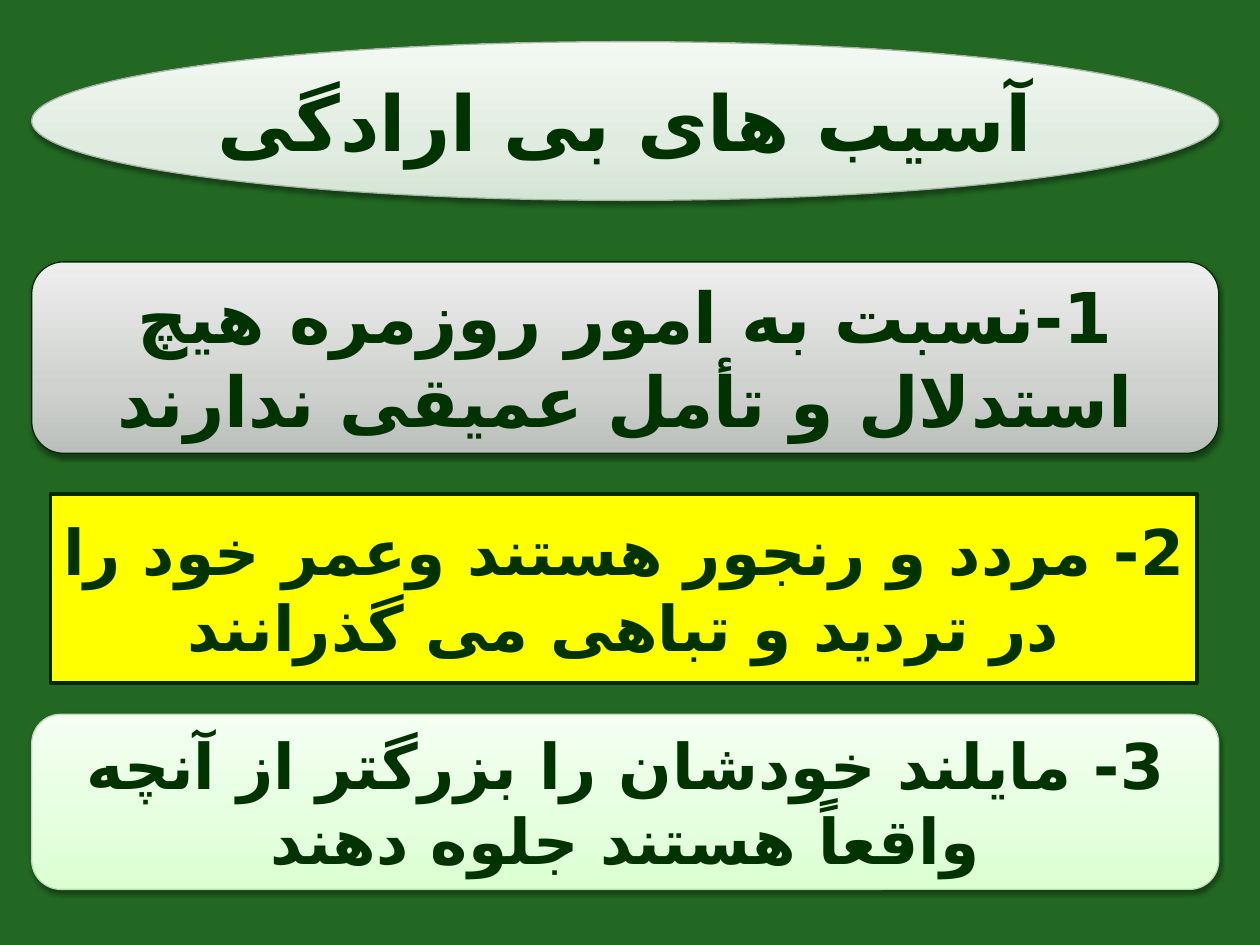
"""Build a slide with an oval heading and three numbered Persian statements."""
from copy import deepcopy
from dataclasses import dataclass

from lxml import etree
from pptx import Presentation, util as u
from pptx.dml.color import RGBColor
from pptx.enum import shapes as sh, text as tx
from pptx.oxml.ns import qn

FONT = "DejaVu Sans"
GREEN = RGBColor(0x22, 0x68, 0x22)
INK = RGBColor(0x00, 0x33, 0x00)
EDGE = RGBColor(0x00, 0x29, 0x00)
YELLOW = RGBColor(0xFF, 0xFF, 0x00)
GREY = (RGBColor(0xBB, 0xBF, 0xBB), RGBColor(0xD0, 0xD2, 0xD0), RGBColor(0xED, 0xEE, 0xED))
SAGE = (RGBColor(0xD5, 0xE5, 0xD5), RGBColor(0xE1, 0xEC, 0xE1), RGBColor(0xF3, 0xF8, 0xF3))
MINT = (RGBColor(0xDA, 0xFF, 0xD1), RGBColor(0xE4, 0xFF, 0xDE), RGBColor(0xF4, 0xFF, 0xF2))
SAGE_EDGE = RGBColor(0xA7, 0xB5, 0xA7)
MINT_EDGE = RGBColor(0xBC, 0xDD, 0xB4)
STOPS = (0, 0.35, 1)
KIND = sh.MSO_SHAPE


@dataclass
class Panel:
    kind: int
    top: float
    high: float
    fill: tuple
    edge: RGBColor
    size: int = 36
    words: str = ""
    left: float = 0.64
    wide: float = 23.93
    line: float = 0.75


HEAD = Panel(KIND.OVAL, 0.84, 3.2, SAGE, SAGE_EDGE)
PANELS = [
    Panel(KIND.ROUNDED_RECTANGLE, 5.28, 3.86, GREY, EDGE, 40,
          "1-نسبت به امور روزمره هیچ استدلال و تأمل عمیقی ندارند"),
    HEAD,
    Panel(KIND.ROUNDED_RECTANGLE, 14.4, 3.53, MINT, MINT_EDGE, 36,
          "3- مایلند خودشان را بزرگتر از آنچه واقعاً هستند جلوه دهند"),
    Panel(KIND.RECTANGLE, 9.96, 3.81, (YELLOW,), EDGE, 36,
          "2- مردد و رنجور هستند وعمر خود را در تردید و تباهی می گذرانند",
          1.02, 23.11, 2),
]


def blend(shape, tones: tuple) -> None:
    """Fill the shape with an upward gradient."""
    fill = shape.fill
    fill.gradient()
    fill.gradient_angle = 90
    stops = shape._element.spPr.find(qn("a:gradFill")).find(qn("a:gsLst"))
    stops.append(deepcopy(stops[-1]))
    for stop, tone, spot in zip(fill.gradient_stops, tones, STOPS):
        stop.color.rgb = tone
        stop.position = spot


def shade(shape) -> None:
    """Add a soft shadow below the shape."""
    root = shape._element.spPr.find(qn("a:effectLst"))
    drop = etree.SubElement(root, qn("a:outerShdw"), blurRad=str(u.Pt(3.1)),
                            dist=str(u.Pt(1.6)), dir="5400000", rotWithShape="0")
    tone = etree.SubElement(drop, qn("a:srgbClr"), val="000000")
    etree.SubElement(tone, qn("a:alpha"), val="38000")


def write(shape, words: str, size: int) -> None:
    """Set centred bold right-to-left text."""
    frame = shape.text_frame
    form = {"word_wrap": True, "auto_size": tx.MSO_AUTO_SIZE.NONE,
            "vertical_anchor": tx.MSO_ANCHOR.MIDDLE}
    for key, val in form.items():
        setattr(frame, key, val)
    para = frame.paragraphs[0]
    para.alignment = tx.PP_ALIGN.CENTER
    para._p.get_or_add_pPr().set("rtl", "1")
    run = para.add_run()
    run.text = words
    for key, val in {"size": u.Pt(size), "bold": True, "name": FONT}.items():
        setattr(run.font, key, val)
    run.font.color.rgb = INK
    etree.SubElement(run._r.get_or_add_rPr(), qn("a:cs"), typeface=FONT)


def draw(slide, item: Panel) -> None:
    """Draw one panel with its text."""
    box = map(u.Cm, (item.left, item.top, item.wide, item.high))
    shape = slide.shapes.add_shape(item.kind, *box)
    shape.shadow.inherit = False
    if len(item.fill) > 1:
        blend(shape, item.fill)
        shade(shape)
    else:
        shape.fill.solid()
        shape.fill.fore_color.rgb = item.fill[0]
    shape.line.color.rgb = item.edge
    shape.line.width = u.Pt(item.line)
    if item.words:
        write(shape, item.words, item.size)


def head(slide) -> None:
    """Place the title over the oval."""
    title = slide.shapes.title
    place = {"left": HEAD.left, "top": HEAD.top, "width": HEAD.wide, "height": HEAD.high}
    for key, val in place.items():
        setattr(title, key, u.Cm(val))
    write(title, "آسیب های بی ارادگی", 44)
    title._element.getparent().append(title._element)


def main() -> None:
    """Build and save the deck."""
    deck = Presentation()
    deck.slide_width, deck.slide_height = u.Cm(25.4), u.Cm(19.05)
    slide = deck.slides.add_slide(deck.slide_layouts.get_by_name("Title Only"))
    slide.background.fill.solid()
    slide.background.fill.fore_color.rgb = GREEN
    for item in PANELS:
        draw(slide, item)
    head(slide)
    deck.save("out.pptx")


if __name__ == "__main__":
    main()
